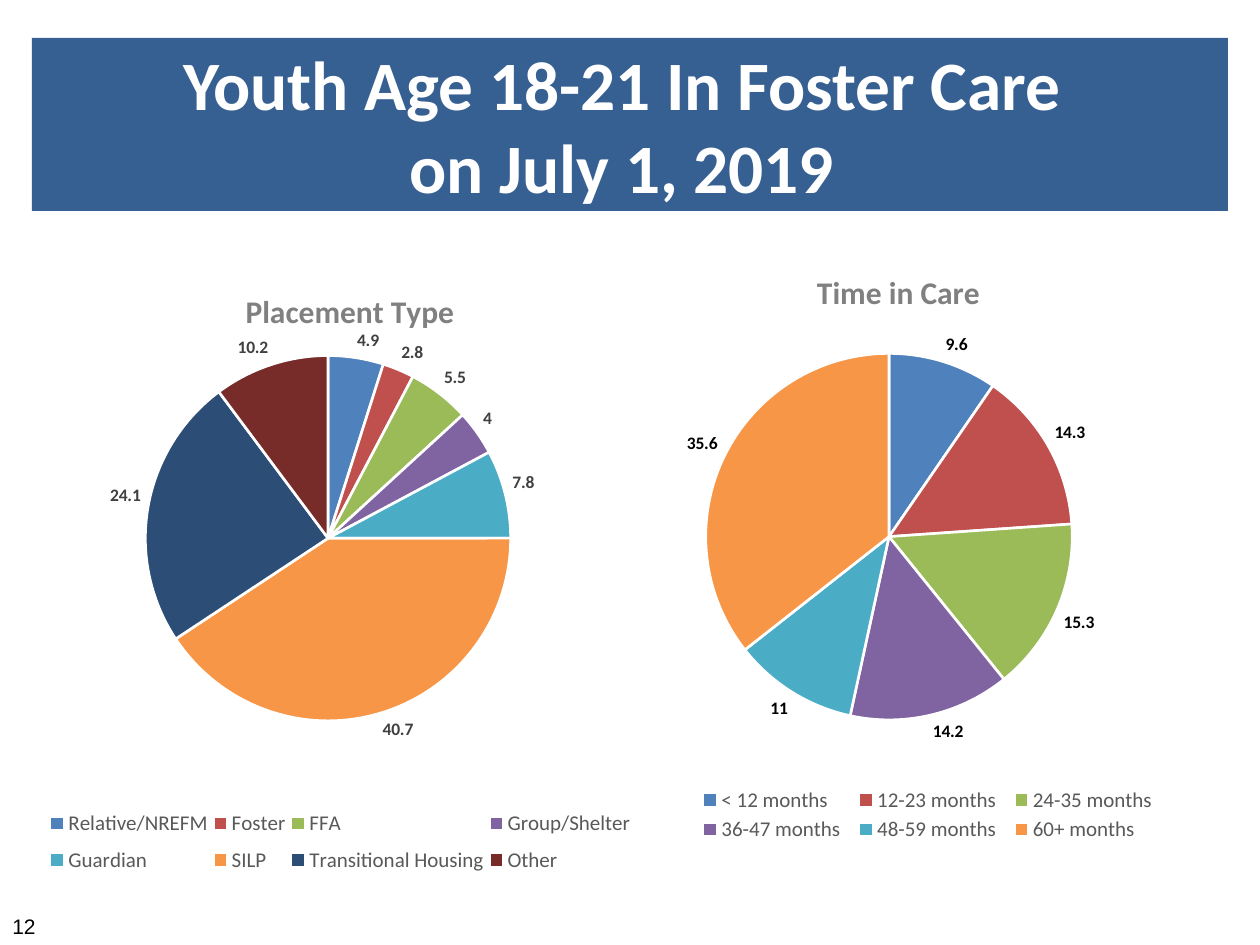
import pptx
import pptx.chart.data
import pptx.dml.color
import pptx.enum.chart
import pptx.enum.shapes
import pptx.enum.text
import pptx.oxml
import pptx.oxml.ns
import pptx.util

RGB = pptx.dml.color.RGBColor
WHITE = RGB(0xFF, 0xFF, 0xFF)
BLACK = RGB(0, 0, 0)
BANNER = RGB(0x37, 0x60, 0x92)
HEADING = RGB(0x80, 0x80, 0x80)
LEGEND = RGB(0x59, 0x59, 0x59)
DARK_LABEL = RGB(0x40, 0x40, 0x40)
SLICES = [RGB.from_string(c) for c in (
    "4F81BD", "C0504D", "9BBB59", "8064A2",
    "4BACC6", "F79646", "2C4D75", "772C2A")]
PX = 914400 // 126


def emu(*lengths):
    return [pptx.util.Emu(n * PX) for n in lengths]


def style(font, color, **values):
    font.color.rgb = color
    for name, value in values.items():
        setattr(font, name, value)


def place(element, index, box, inner=False):
    """Give a chart part a manual layout, in fractions of the chart."""
    for old in element.findall(pptx.oxml.ns.qn("c:layout")):
        element.remove(old)
    parts = {"layoutTarget": "inner"} if inner else {}
    parts.update(xMode="edge", yMode="edge")
    parts.update(zip("xywh", box))
    body = "".join(f'<c:{k} val="{v}"/>' for k, v in parts.items())
    element.insert(index, pptx.oxml.parse_xml(
        f"<c:layout {pptx.oxml.ns.nsdecls('c')}>"
        f"<c:manualLayout>{body}</c:manualLayout></c:layout>"))


class Deck:
    font = "Calibri"

    def __init__(self, width, height):
        self.prs = pptx.Presentation()
        self.prs.slide_width, self.prs.slide_height = emu(width, height)
        self.s = self.prs.slides.add_slide(self.prs.slide_layouts[6])

    def banner(self, text, *box):
        sp = self.s.shapes.add_shape(
            pptx.enum.shapes.MSO_SHAPE.RECTANGLE, *emu(*box))
        sp.shadow.inherit = False
        sp.fill.solid()
        sp.fill.fore_color.rgb = BANNER
        sp.line.fill.background()
        tf = sp.text_frame
        tf.vertical_anchor = pptx.enum.text.MSO_ANCHOR.MIDDLE
        p = tf.paragraphs[0]
        p.text = text
        p.alignment = pptx.enum.text.PP_ALIGN.CENTER
        for r in p.runs:
            style(r.font, WHITE, name=self.font, bold=True,
                  size=pptx.util.Pt(39.6))

    def page_number(self, text, *box):
        tf = self.s.shapes.add_textbox(*emu(*box)).text_frame
        tf.word_wrap = False
        r = tf.paragraphs[0].add_run()
        r.text = text
        style(r.font, BLACK, name="Arial", size=pptx.util.Pt(12))

    def pie(self, title, values, box, label_color, legend_position,
            title_at, plot_at, legend_at):
        data = pptx.chart.data.CategoryChartData()
        data.categories = list(values)
        data.add_series("Series 1", list(values.values()))
        chart = self.s.shapes.add_chart(
            pptx.enum.chart.XL_CHART_TYPE.PIE, *emu(*box), data).chart
        style(chart.font, BLACK, name=self.font, size=pptx.util.Pt(10))

        chart.has_title = True
        p = chart.chart_title.text_frame.paragraphs[0]
        r = p.add_run()
        r.text = title
        style(r.font, HEADING, name=self.font, bold=True,
              size=pptx.util.Pt(18))
        place(chart.chart_title._element, 1, title_at)

        chart.has_legend = True
        chart.legend.position = legend_position
        chart.legend.include_in_layout = False
        style(chart.legend.font, LEGEND, name=self.font,
              size=pptx.util.Pt(12))
        place(chart.legend._element, 1, legend_at)

        plot = chart.plots[0]
        plot.vary_by_categories = True
        plot.has_data_labels = True
        labels = plot.data_labels
        labels.show_value = True
        labels.show_percentage = False
        labels.position = pptx.enum.chart.XL_LABEL_POSITION.OUTSIDE_END
        style(labels.font, label_color, name=self.font, bold=True,
              size=pptx.util.Pt(10))
        place(chart._chartSpace.chart.plotArea, 0, plot_at, inner=True)

        for i, color in enumerate(SLICES[:len(values)]):
            form = plot.series[0].points[i].format
            form.fill.solid()
            form.fill.fore_color.rgb = color
            form.line.color.rgb = WHITE
            form.line.width = pptx.util.Pt(1.5)


def main():
    deck = Deck(1260, 945)
    deck.banner("Youth Age 18-21 In Foster Care \von July 1, 2019 ",
                32, 38, 1196, 173)
    deck.page_number("12", 0, 907, 49, 38)
    position = pptx.enum.chart.XL_LEGEND_POSITION
    deck.pie(
        "Time in Care",
        {"< 12 months": 9.6, "12-23 months": 14.3, "24-35 months": 15.3,
         "36-47 months": 14.2, "48-59 months": 11, "60+ months": 35.6},
        (620, 246, 598, 632), BLACK, position.RIGHT,
        title_at=(0.32, 0.03), plot_at=(0.14, 0.17, 0.62, 0.58),
        legend_at=(0.12, 0.85, 0.79, 0.1))
    deck.pie(
        "Placement Type",
        {"Relative/NREFM": 4.9, "Foster": 2.8, "FFA": 5.5,
         "Group/Shelter": 4, "Guardian": 7.8, "SILP": 40.7,
         "Transitional Housing": 24.1, "Other": 10.2},
        (32, 251, 630, 653), DARK_LABEL, position.BOTTOM,
        title_at=(0.33, 0.05), plot_at=(0.18, 0.16, 0.58, 0.56),
        legend_at=(0.02, 0.84, 0.94, 0.13))
    deck.prs.save("out.pptx")


if __name__ == "__main__":
    main()
